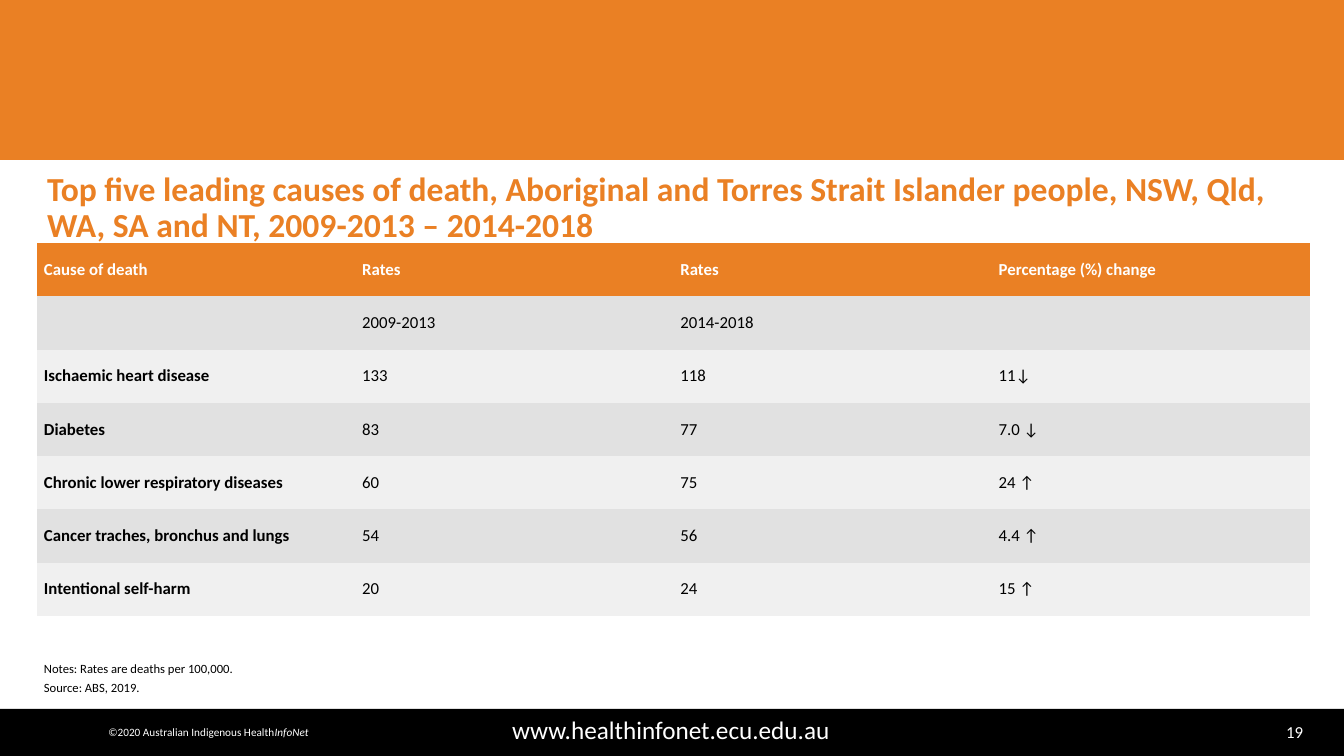
from pptx import Presentation
from pptx.dml.color import RGBColor
from pptx.enum.shapes import MSO_SHAPE
from pptx.enum.text import MSO_ANCHOR, PP_ALIGN
from pptx.util import Pt

ORANGE = RGBColor(0xEA, 0x80, 0x24)
BLACK = RGBColor(0, 0, 0)
WHITE = RGBColor(0xFF, 0xFF, 0xFF)
DARK_BAND = RGBColor(0xE1, 0xE1, 0xE1)
LIGHT_BAND = RGBColor(0xF0, 0xF0, 0xF0)
NO_STYLE = "{2D5ABB26-0587-4C30-8999-92F81FD0307C}"
EMU_PER_PX = 914400 / 100.8


def px(*lengths):
    return [round(length * EMU_PER_PX) for length in lengths]


def format_text(tf, size, color, bold=False, align=PP_ALIGN.LEFT, after=0):
    for p in tf.paragraphs:
        p.alignment = align
        p.space_after = Pt(after)
        for r in p.runs:
            r.font.name = "Calibri"
            r.font.size = Pt(size)
            r.font.bold = bold
            r.font.color.rgb = color


prs = Presentation()
prs.slide_width, prs.slide_height = px(1344, 756)
s = prs.slides.add_slide(prs.slide_layouts[5])

for box, color in [((-3, 0, 1347, 160), ORANGE), ((0, 709, 1344, 47), BLACK)]:
    sp = s.shapes.add_shape(MSO_SHAPE.RECTANGLE, *px(*box))
    sp.shadow.inherit = False
    sp.fill.solid()
    sp.fill.fore_color.rgb = color
    sp.line.fill.background()

texts = [
    ("19", (1205, 717, 108, 30), 12, WHITE, PP_ALIGN.RIGHT, MSO_ANCHOR.MIDDLE, 0),
    ("www.healthinfonet.ecu.edu.au", (62, 709, 1218, 39), 18, WHITE, PP_ALIGN.CENTER, MSO_ANCHOR.TOP, 0),
    ("Notes: Rates are deaths per 100,000.\nSource: ABS, 2019.",
     (34, 656, 1273, 45), 9, BLACK, PP_ALIGN.LEFT, MSO_ANCHOR.TOP, 3),
]
for text, box, size, color, align, anchor, after in texts:
    tf = s.shapes.add_textbox(*px(*box)).text_frame
    tf.word_wrap = True
    tf.vertical_anchor = anchor
    tf.text = text
    format_text(tf, size, color, align=align, after=after)

tf = s.shapes.add_textbox(*px(93, 720, 231, 24)).text_frame
tf.word_wrap = False
tf.text = "©2020 Australian Indigenous Health"
r = tf.paragraphs[0].add_run()
r.text = "InfoNet"
r.font.italic = True
format_text(tf, 8, WHITE, align=PP_ALIGN.CENTER)

title = s.shapes.title
title.left, title.top, title.width, title.height = px(37, 166, 1270, 85)
tf = title.text_frame
tf.word_wrap = True
tf.vertical_anchor = MSO_ANCHOR.MIDDLE
tf.text = ("Top five leading causes of death, Aboriginal and Torres Strait Islander people, "
           "NSW, Qld, WA, SA and NT, 2009-2013 – 2014-2018")
tf.paragraphs[0].line_spacing = 0.9
format_text(tf, 24, ORANGE, bold=True)

rows = [
    ("Cause of death", "Rates", "Rates", "Percentage (%) change"),
    ("", "2009-2013", "2014-2018", ""),
    ("Ischaemic heart disease", "133", "118", "11↓"),
    ("Diabetes", "83", "77", "7.0 ↓"),
    ("Chronic lower respiratory diseases", "60", "75", "24 ↑"),
    ("Cancer traches, bronchus and lungs", "54", "56", "4.4 ↑"),
    ("Intentional self-harm", "20", "24", "15 ↑"),
]
frame = s.shapes.add_table(len(rows), len(rows[0]), *px(37, 243, 1273, 373))
table = frame.table
table._tbl.tblPr[0].text = NO_STYLE
for i, row in enumerate(rows):
    header = i == 0
    band = ORANGE if header else DARK_BAND if i % 2 else LIGHT_BAND
    for j, text in enumerate(row):
        cell = table.cell(i, j)
        cell.fill.solid()
        cell.fill.fore_color.rgb = band
        cell.margin_left, cell.margin_top, cell.margin_right, cell.margin_bottom = px(7, 0, 7, 0)
        cell.vertical_anchor = MSO_ANCHOR.MIDDLE
        cell.text_frame.text = text
        format_text(cell.text_frame, 12, WHITE if header else BLACK,
                    bold=header or j == 0, after=5)

prs.save("out.pptx")
